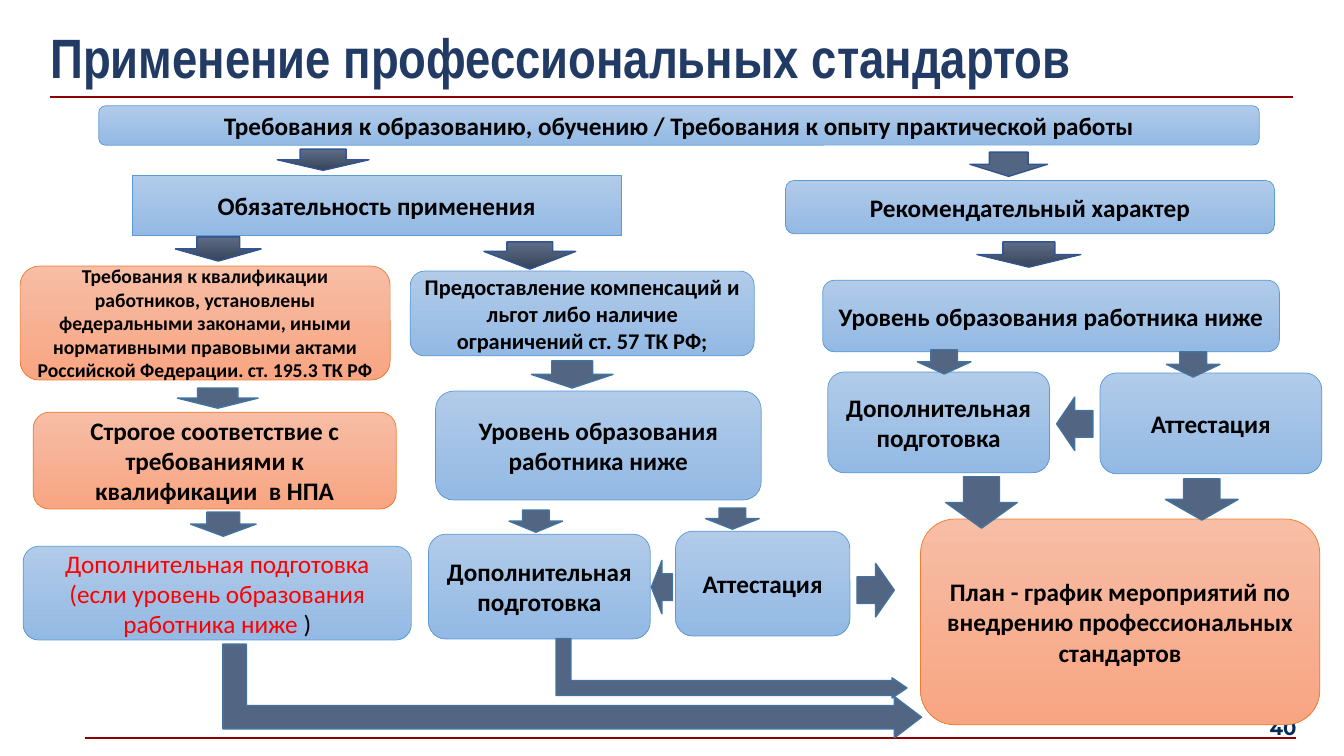
"""Build the slide on applying professional standards."""
from dataclasses import dataclass

from lxml.etree import SubElement
from pptx import Presentation
from pptx.dml.color import RGBColor
from pptx.enum.shapes import MSO_CONNECTOR, MSO_SHAPE
from pptx.enum.text import MSO_ANCHOR, MSO_AUTO_SIZE, PP_ALIGN
from pptx.oxml.ns import qn
from pptx.util import Inches, Pt


@dataclass(frozen=True)
class Theme:
    title_font: str = "Arial Narrow"
    body_font: str = "Calibri"
    number_font: str = "Montserrat"
    title_size: float = 39.6
    body_size: float = 18
    medium_size: float = 16
    small_size: float = 14
    title: str = "223B64"
    number: str = "002C55"
    rule: str = "8E0000"
    text: str = "000000"
    alert: str = "FF0000"
    arrow: tuple = ("526582",)
    dark_arrow: tuple = ("5E6D85", "35445A")
    arrow_line: str = "43739E"
    dark_line: str = "325491"
    blue: tuple = ("B1CBE9", "93B9E4")
    blue_line: str = "5B9BD5"
    orange: tuple = ("F7BDA5", "F8A582")
    orange_line: str = "ED7D31"


class Board:
    def __init__(self, slide, theme):
        self.slide, self.theme = slide, theme

    def font(self, target, name, size, color, bold=True):
        font = target.font
        font.name, font.size, font.bold = name, Pt(size), bold
        font.color.rgb = RGBColor.from_string(color)

    def rule(self, left, right, y):
        line = self.slide.shapes.add_connector(
            MSO_CONNECTOR.STRAIGHT, Inches(left), Inches(y), Inches(right), Inches(y))
        line.line.color.rgb = RGBColor.from_string(self.theme.rule)
        line.line.width = Pt(1.5)
        SubElement(line._element.spPr, qn("a:effectLst"))

    def frame(self, sp, margins):
        tf = sp.text_frame
        tf.word_wrap = True
        tf.auto_size = MSO_AUTO_SIZE.NONE
        tf.vertical_anchor = MSO_ANCHOR.MIDDLE
        tf.margin_left = tf.margin_right = Inches(margins[0])
        tf.margin_top = tf.margin_bottom = Inches(margins[1])
        return tf

    def title(self, text, *at):
        sp = self.slide.shapes.title
        sp.left, sp.top, sp.width, sp.height = map(Inches, at)
        tf = self.frame(sp, (0, 0.05))
        tf.text = text
        p = tf.paragraphs[0]
        p.alignment, p.line_spacing = PP_ALIGN.LEFT, 0.9
        self.font(p, self.theme.title_font, self.theme.title_size, self.theme.title)

    def number(self, text, *at):
        tf = self.frame(self.slide.shapes.add_textbox(*map(Inches, at)), (0, 0))
        tf.text = text
        p = tf.paragraphs[0]
        p.alignment = PP_ALIGN.RIGHT
        self.font(p, self.theme.number_font, self.theme.small_size, self.theme.number)

    def shape(self, kind, at, fill, line, width, adj=()):
        sp = self.slide.shapes.add_shape(kind, *map(Inches, at))
        sp.shadow.inherit = False
        if len(fill) == 1:
            sp.fill.solid()
            sp.fill.fore_color.rgb = RGBColor.from_string(fill[0])
        else:
            sp.fill.gradient()
            sp.fill.gradient_angle = 270
            for stop, color in zip(sp.fill.gradient_stops, fill):
                stop.color.rgb = RGBColor.from_string(color)
        sp.line.color.rgb = RGBColor.from_string(line)
        sp.line.width = Pt(width)
        for i, value in enumerate(adj):
            sp.adjustments[i] = value
        return sp

    def box(self, text, *at, orange=False, size=None, adj=()):
        t = self.theme
        fill, line = (t.orange, t.orange_line) if orange else (t.blue, t.blue_line)
        sp = self.shape(MSO_SHAPE.ROUNDED_RECTANGLE, at, fill, line, 0.5, adj)
        tf = self.frame(sp, (0.1, 0.05))
        tf.text = text
        p = tf.paragraphs[0]
        p.alignment = PP_ALIGN.CENTER
        self.font(p, t.body_font, size or t.body_size, t.text)
        return p

    def note(self, alert, tail, *at):
        t = self.theme
        p = self.box(alert, *at)
        p.font.bold = False
        p.runs[0].font.color.rgb = RGBColor.from_string(t.alert)
        p.add_run().text = tail

    def arrow(self, kind, *at, adj=(), fill=None, line=None, rotation=0):
        t = self.theme
        sp = self.shape(kind, at, fill or t.arrow, line or t.arrow_line, 1, adj)
        sp.rotation = rotation


def main():
    prs = Presentation()
    prs.slide_width, prs.slide_height = Inches(13.33), Inches(7.5)
    theme = Theme()
    b = Board(prs.slides.add_slide(prs.slide_layouts[5]), theme)

    b.rule(0.84, 12.85, 7.32)
    b.rule(0.5, 12.82, 0.96)
    b.title("Применение профессиональных стандартов", 0.5, 0.25, 12.32, 0.71)
    b.number("40", 12.27, 7.02, 0.59, 0.4)

    training, review = "Дополнительная подготовка", "Аттестация"
    lower = "Уровень образования работника ниже"
    b.box("Требования к образованию, обучению / Требования к опыту практической работы",
          0.98, 1.05, 11.51, 0.39)
    b.box("Обязательность применения", 1.31, 1.74, 4.85, 0.6, adj=(0,))
    b.box("Рекомендательный характер", 7.79, 1.79, 4.85, 0.53)
    b.box(lower, 8.16, 2.78, 4.53, 0.71)
    b.box("Предоставление компенсаций и льгот либо наличие ограничений ст. 57 ТК РФ;",
          4.07, 2.69, 3.41, 0.84, size=theme.medium_size)
    b.box("План - график мероприятий по внедрению профессиональных стандартов",
          9.13, 5.15, 3.96, 2.04, orange=True)
    b.box("Требования к квалификации работников, установлены федеральными законами, "
          "иными нормативными правовыми актами Российской Федерации. ст. 195.3 ТК РФ",
          0.2, 2.64, 3.67, 1.13, orange=True, size=theme.small_size)
    b.box("Строгое соответствие с требованиями к квалификации  в НПА",
          0.33, 4.09, 3.6, 0.96, orange=True)
    b.box(lower, 4.32, 3.88, 3.23, 1.08)
    b.note("Дополнительная подготовка (если уровень образования работника ниже ", ")",
           0.23, 5.42, 3.85, 0.93)
    b.box(training, 4.25, 5.3, 2.2, 1.04)
    b.box(review, 6.7, 5.27, 1.73, 1.04)
    b.box(training, 8.21, 3.69, 2.2, 1)
    b.box(review, 10.91, 3.7, 2.2, 1)

    down = MSO_SHAPE.DOWN_ARROW
    for at, adj in (((2.75, 1.48, 0.91, 0.21), ()), ((4.8, 2.4, 0.91, 0.27), (0.5, 0.65)),
                    ((1.74, 2.35, 0.85, 0.24), ()), ((9.69, 2.4, 1.03, 0.25), ())):
        b.arrow(down, *at, adj=adj, fill=theme.dark_arrow, line=theme.dark_line)
    b.arrow(down, 9.62, 1.51, 0.77, 0.24, line=theme.dark_line)
    for at in ((1.76, 3.85, 0.8, 0.2), (5.27, 3.58, 0.81, 0.27), (1.89, 5.08, 0.65, 0.24),
               (5.05, 5.06, 0.53, 0.22), (7, 5.04, 0.53, 0.21), (9.1, 3.47, 0.53, 0.24),
               (11.57, 3.49, 0.53, 0.25), (9.38, 4.73, 0.71, 0.51), (11.56, 4.75, 0.72, 0.41)):
        b.arrow(down, *at)
    b.arrow(MSO_SHAPE.RIGHT_ARROW, 8.5, 5.59, 0.37, 0.53)
    b.arrow(MSO_SHAPE.LEFT_ARROW, 6.46, 5.56, 0.21, 0.53)
    b.arrow(MSO_SHAPE.LEFT_ARROW, 10.48, 3.94, 0.36, 0.53)
    bent = MSO_SHAPE.BENT_UP_ARROW
    b.arrow(bent, 5.21, 3.39, 0.93, 6.93, adj=(0.25, 0.22, 0.29), rotation=90)
    b.arrow(bent, 6.96, 4.89, 0.59, 3.48, adj=(0.25, 0.17, 0.25), rotation=90)

    prs.save("out.pptx")


if __name__ == "__main__":
    main()
